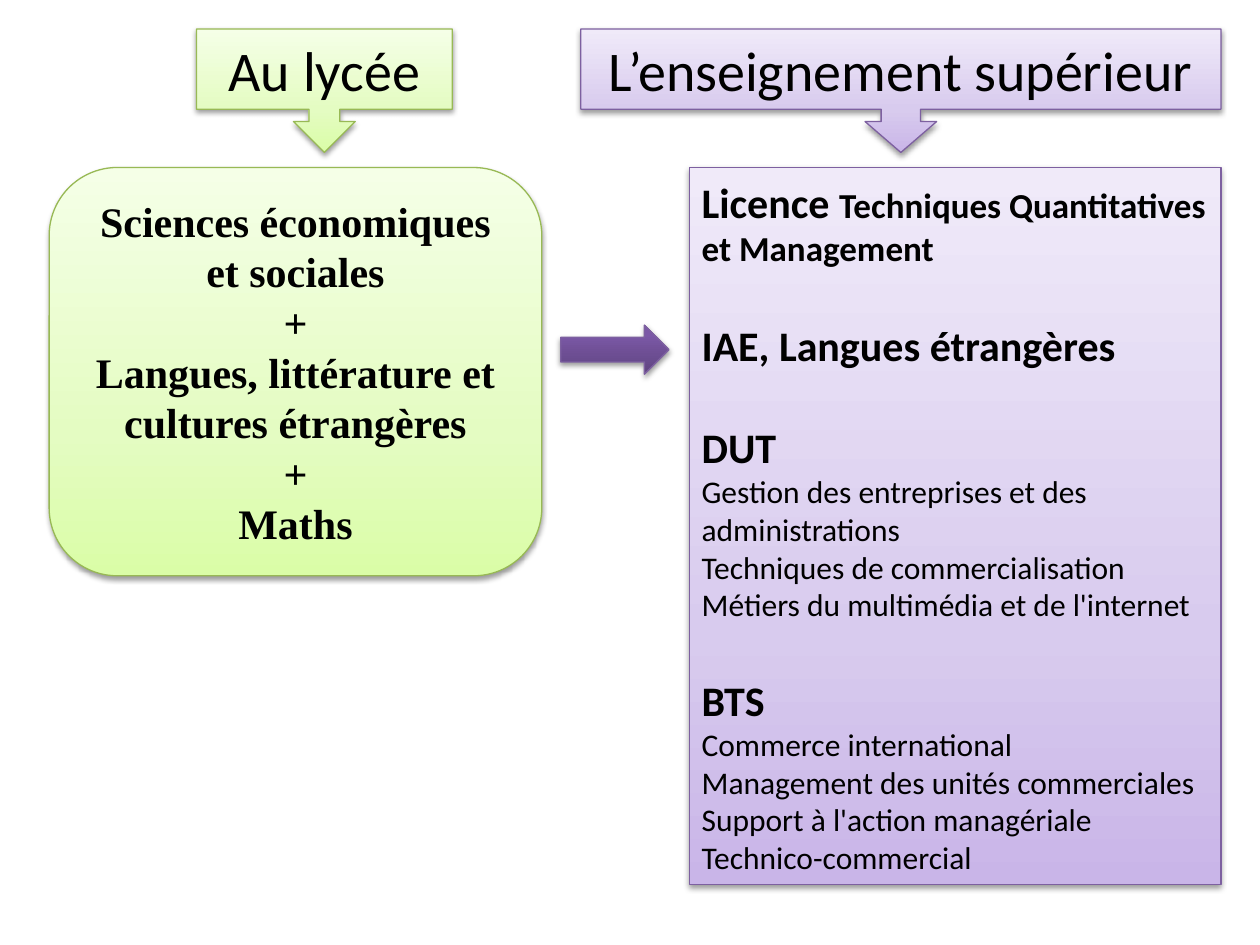
from dataclasses import dataclass

from lxml import etree
from pptx import Presentation
from pptx.dml.color import RGBColor
from pptx.enum.shapes import MSO_SHAPE
from pptx.enum.text import MSO_ANCHOR, PP_ALIGN
from pptx.oxml.ns import qn
from pptx.util import Inches, Pt

CALLOUT = MSO_SHAPE.DOWN_ARROW_CALLOUT
ROUNDED = MSO_SHAPE.ROUNDED_RECTANGLE
RECTANGLE = MSO_SHAPE.RECTANGLE
ARROW = MSO_SHAPE.RIGHT_ARROW
CENTER, LEFT = PP_ALIGN.CENTER, PP_ALIGN.LEFT
MIDDLE = MSO_ANCHOR.MIDDLE

COLORS = {
    "text": "000000",
    "shadow": "000000",
    "green line": "98B955",
    "purple line": "7D60A0",
}
# Each gradient runs from bottom to top: (percent, colour)
GRADIENTS = {
    "green": [(0, "DAFDA7"), (35, "E4FCC2"), (100, "F5FFE7")],
    "purple": [(0, "C9B5E8"), (35, "D8CBEE"), (100, "F0EAF9")],
    "dark purple": [(0, "5F4480"), (80, "7B58A6"), (100, "7C57A8")],
}
SECTION_GAP = Pt(29.3)  # one 24 pt Calibri line


@dataclass
class Span:
    text: str
    size: int
    bold: bool = False


@dataclass
class Line:
    spans: list[Span]
    opens_section: bool = False


@dataclass
class Panel:
    kind: MSO_SHAPE
    left: float
    top: float
    width: float
    height: float
    gradient: str
    outline: str
    lines: list[Line]
    font: str = "Calibri"
    align: PP_ALIGN = CENTER
    adjustments: tuple[float, ...] = ()


def heading(text: str) -> list[Line]:
    return [Line([Span(text, 32)])]


def section(title: str, courses: list[str]) -> list[Line]:
    """A bold section title, set apart from the one above, and its courses."""
    return [Line([Span(title, 24, True)], True)] + [Line([Span(course, 18)]) for course in courses]


def fill_gradient(shape, stops: list[tuple[int, str]]) -> None:
    shape.fill.gradient()
    shape.fill.gradient_angle = 90
    stop_list = shape._element.spPr.find(".//" + qn("a:gsLst"))
    for stop in list(stop_list):
        stop_list.remove(stop)
    for percent, color in stops:
        stop = etree.SubElement(stop_list, qn("a:gs"), pos=str(percent * 1000))
        etree.SubElement(stop, qn("a:srgbClr"), val=color)


def add_shadow(shape) -> None:
    shape.shadow.inherit = False
    effects = shape._element.spPr.find(qn("a:effectLst"))
    shadow = etree.SubElement(effects, qn("a:outerShdw"), blurRad=str(Pt(3.1)),
                              dist=str(Pt(1.6)), dir="5400000", rotWithShape="0")
    color = etree.SubElement(shadow, qn("a:srgbClr"), val=COLORS["shadow"])
    etree.SubElement(color, qn("a:alpha"), val="38000")


def write_lines(frame, panel: Panel) -> None:
    frame.word_wrap = True
    frame.vertical_anchor = MIDDLE
    for index, line in enumerate(panel.lines):
        paragraph = frame.add_paragraph() if index else frame.paragraphs[0]
        paragraph.alignment = panel.align
        if line.opens_section:
            paragraph.space_before = SECTION_GAP
        for span in line.spans:
            run = paragraph.add_run()
            run.text = span.text
            run.font.name = panel.font
            run.font.size = Pt(span.size)
            run.font.bold = span.bold
            run.font.color.rgb = RGBColor.from_string(COLORS["text"])


def draw_panel(slide, panel: Panel) -> None:
    shape = slide.shapes.add_shape(panel.kind, Inches(panel.left), Inches(panel.top),
                                   Inches(panel.width), Inches(panel.height))
    for index, value in enumerate(panel.adjustments):
        shape.adjustments[index] = value
    fill_gradient(shape, GRADIENTS[panel.gradient])
    shape.line.color.rgb = RGBColor.from_string(COLORS[panel.outline])
    shape.line.width = Pt(0.75)
    add_shadow(shape)
    write_lines(shape.text_frame, panel)


SUBJECTS = ["Sciences économiques et sociales", "+",
            "Langues, littérature et cultures étrangères", "+", "Maths"]
HIGHER_EDUCATION = [
    Line([Span("Licence ", 24, True), Span("Techniques Quantitatives et Management", 20, True)]),
    *section("IAE, Langues étrangères", []),
    *section("DUT", ["Gestion des entreprises et des administrations",
                     "Techniques de commercialisation",
                     "Métiers du multimédia et de l'internet"]),
    *section("BTS", ["Commerce international",
                     "Management des unités commerciales",
                     "Support à l'action managériale",
                     "Technico-commercial"]),
]
PANELS = [
    Panel(ROUNDED, 0.39, 1.33, 3.91, 3.24, "green", "green line",
          [Line([Span(subject, 24, True)]) for subject in SUBJECTS], "Times New Roman"),
    Panel(CALLOUT, 1.56, 0.23, 2.03, 0.98, "green", "green line", heading("Au lycée")),
    Panel(CALLOUT, 4.61, 0.23, 5.08, 0.98, "purple", "purple line",
          heading("L’enseignement supérieur"), adjustments=(0.32, 0.29, 0.25, 0.65)),
    Panel(RECTANGLE, 5.47, 1.33, 4.22, 5.69, "purple", "purple line",
          HIGHER_EDUCATION, align=LEFT),
    Panel(ARROW, 4.45, 2.58, 0.86, 0.39, "dark purple", "purple line", []),
]


def main() -> None:
    presentation = Presentation()
    presentation.slide_width = Inches(10)
    presentation.slide_height = Inches(7.5)
    slide = presentation.slides.add_slide(presentation.slide_layouts[6])
    for panel in PANELS:
        draw_panel(slide, panel)
    presentation.save("out.pptx")


if __name__ == "__main__":
    main()
